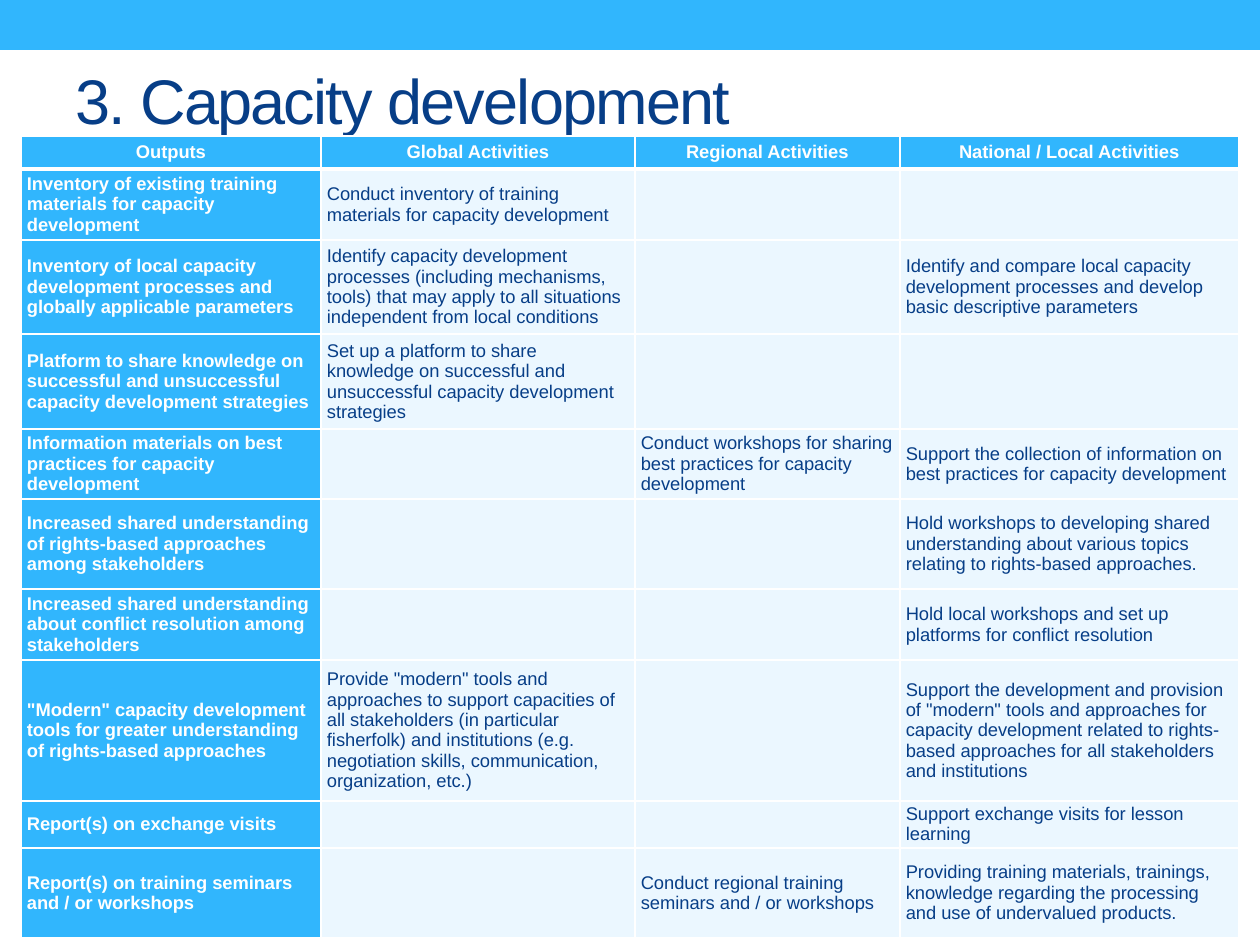
"""Build a slide with a table of capacity development outputs and activities."""
from lxml import etree
from pptx import Presentation
from pptx.dml.color import RGBColor
from pptx.enum.shapes import MSO_SHAPE
from pptx.enum.text import MSO_ANCHOR, MSO_AUTO_SIZE, PP_ALIGN
from pptx.oxml.ns import qn
from pptx.util import Pt

PX = 914400 / 126
RECTANGLE = MSO_SHAPE.RECTANGLE
MIDDLE = MSO_ANCHOR.MIDDLE
NO_AUTOFIT = MSO_AUTO_SIZE.NONE
LEFT, CENTER = PP_ALIGN.LEFT, PP_ALIGN.CENTER
TITLE_ONLY = 5
COLORS = {"sky": "31B6FD", "navy": "073E87", "pale": "EBF7FF", "white": "FFFFFF"}
CELL_FORMAT = {
    "margin_left": round(6 * PX),
    "margin_right": round(6 * PX),
    "margin_top": 0,
    "margin_bottom": 0,
    "vertical_anchor": MIDDLE,
}
COLUMN_WIDTHS = [300, 314, 265, 339]
ROW_HEIGHTS = [33, 71, 94, 95, 70, 90, 71, 141, 47, 90]
ROWS = [
    ["Outputs", "Global Activities", "Regional Activities", "National / Local Activities"],
    ["Inventory of existing training materials for capacity development",
     "Conduct inventory of training materials for capacity development", "", ""],
    ["Inventory of local capacity development processes and globally applicable parameters",
     "Identify capacity development processes (including mechanisms, tools) that may apply "
     "to all situations independent from local conditions", "",
     "Identify and compare local capacity development processes and develop basic "
     "descriptive parameters"],
    ["Platform to share knowledge on successful and unsuccessful capacity development strategies",
     "Set up a platform to share knowledge on successful and unsuccessful capacity "
     "development strategies", "", ""],
    ["Information materials on best practices for capacity development", "",
     "Conduct workshops for sharing best practices for capacity development",
     "Support the collection of information on best practices for capacity development"],
    ["Increased shared understanding of rights-based approaches among stakeholders", "", "",
     "Hold workshops to developing shared understanding about various topics relating to "
     "rights-based approaches."],
    ["Increased shared understanding about conflict resolution among stakeholders", "", "",
     "Hold local workshops and set up platforms for conflict resolution"],
    ['"Modern" capacity development tools for greater understanding of rights-based approaches',
     'Provide "modern" tools and approaches to support capacities of all stakeholders '
     "(in particular fisherfolk) and institutions (e.g. negotiation skills, communication, "
     "organization, etc.)", "",
     'Support the development and provision of "modern" tools and approaches for capacity '
     "development related to rights-based approaches for all stakeholders and institutions"],
    ["Report(s) on exchange visits", "", "", "Support exchange visits for lesson learning"],
    ["Report(s) on training seminars and / or workshops", "",
     "Conduct regional training seminars and / or workshops",
     "Providing training materials, trainings, knowledge regarding the processing and use "
     "of undervalued products."],
]


def write(paragraph, text, size, color, bold, alignment):
    paragraph.alignment = alignment
    run = paragraph.add_run()
    run.text = text
    for name, value in {"name": "Arial", "size": Pt(size), "bold": bold}.items():
        setattr(run.font, name, value)
    run.font.color.rgb = RGBColor.from_string(COLORS[color])
    return run


def add_borders(cell, widths):
    properties = cell._tc.get_or_add_tcPr()
    for position, (side, width) in enumerate(widths.items()):
        line = etree.Element(qn(f"a:{side}"), w=str(Pt(width)))
        fill = etree.SubElement(line, qn("a:solidFill"))
        etree.SubElement(fill, qn("a:srgbClr"), val=COLORS["white"])
        properties.insert(position, line)


presentation = Presentation()
presentation.slide_width = round(1260 * PX)
presentation.slide_height = round(945 * PX)
slide = presentation.slides.add_slide(presentation.slide_layouts[TITLE_ONLY])

bar = slide.shapes.add_shape(RECTANGLE, 0, 0, presentation.slide_width, round(50 * PX))
bar.shadow.inherit = False
bar.fill.solid()
bar.fill.fore_color.rgb = RGBColor.from_string(COLORS["sky"])
bar.line.fill.background()

title = slide.shapes.title
for name, value in {"left": 63, "top": 31, "width": 1197, "height": 137}.items():
    setattr(title, name, round(value * PX))
title.text_frame.auto_size = NO_AUTOFIT
title.text_frame.vertical_anchor = MIDDLE
title_run = write(title.text_frame.paragraphs[0], "3. Capacity development",
                  36, "navy", False, LEFT)
title_run.font._element.set("spc", "-100")

table = slide.shapes.add_table(
    len(ROWS), len(COLUMN_WIDTHS), round(21 * PX), round(136 * PX),
    round(sum(COLUMN_WIDTHS) * PX), round(sum(ROW_HEIGHTS) * PX)).table
for column, width in zip(table.columns, COLUMN_WIDTHS):
    column.width = round(width * PX)
for row, height in zip(table.rows, ROW_HEIGHTS):
    row.height = round(height * PX)

for row_index, texts in enumerate(ROWS):
    for column_index, text in enumerate(texts):
        cell = table.cell(row_index, column_index)
        is_heading = row_index == 0 or column_index == 0
        for name, value in CELL_FORMAT.items():
            setattr(cell, name, value)
        cell.fill.solid()
        cell.fill.fore_color.rgb = RGBColor.from_string(COLORS["sky" if is_heading else "pale"])
        add_borders(cell, {"lnL": 1, "lnR": 1,
                           "lnT": 3 if row_index == 1 else 1,
                           "lnB": 3 if row_index == 0 else 1})
        if text:
            write(cell.text_frame.paragraphs[0], text, 10.5,
                  "white" if is_heading else "navy", is_heading,
                  CENTER if row_index == 0 else LEFT)

presentation.save("out.pptx")
